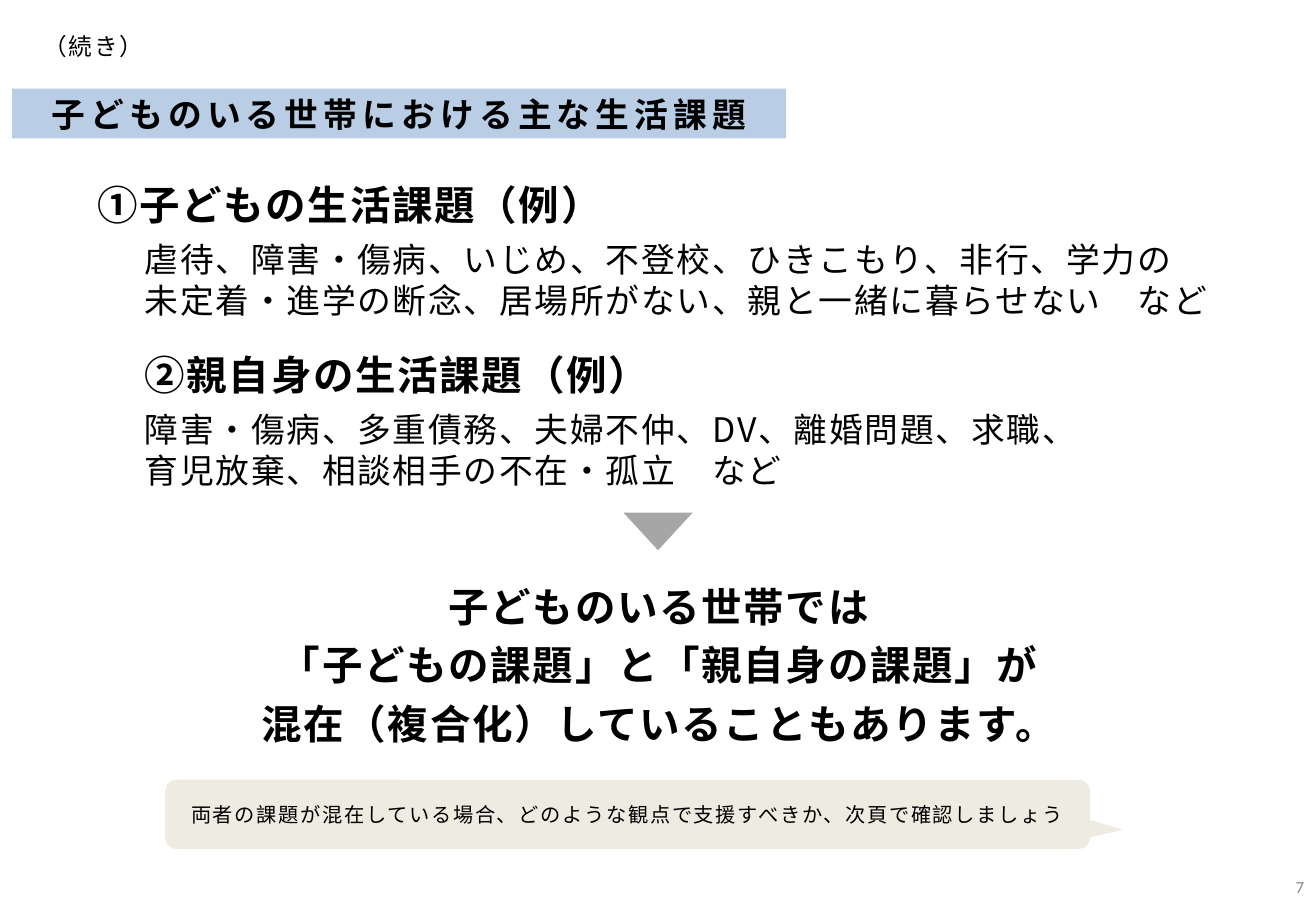
import dataclasses

import lxml.etree
import pptx
import pptx.dml.color
import pptx.enum.shapes
import pptx.enum.text
import pptx.oxml.ns
import pptx.util


@dataclasses.dataclass(frozen=True)
class Theme:
    font: str = "Noto Sans CJK JP"
    number_font: str = "Calibri"
    text: str = "000000"
    muted: str = "898989"
    banner: str = "B9CDE5"
    arrow: str = "A6A6A6"
    callout: str = "EEECE1"
    heading_size: int = 24
    body_size: int = 20
    label_size: int = 14
    note_size: int = 12
    number_size: int = 10
    tight: float = 1.2  # line pitch as a multiple of the type size


theme = Theme()
align = pptx.enum.text.PP_ALIGN
anchor = pptx.enum.text.MSO_ANCHOR
shapes = pptx.enum.shapes.MSO_SHAPE
qn = pptx.oxml.ns.qn

presentation = pptx.Presentation()
presentation.slide_width = pptx.util.Inches(10.83)
presentation.slide_height = pptx.util.Inches(7.5)
slide = presentation.slides.add_slide(presentation.slide_layouts[1])


def frame(left, top, width, height):
    """Turn percentages of the slide's width and height into lengths."""
    column = presentation.slide_width / 100
    row = presentation.slide_height / 100
    return [round(n) for n in (left * column, top * row, width * column, height * row)]


def write(shape, text, size, font=theme.font, color=theme.text, bold=False, spacing=1,
          alignment=align.LEFT, vertical=anchor.TOP, indent=0, after=0, tight=False):
    """Add one formatted paragraph; a newline in the text is a line break."""
    text_frame = shape.text_frame
    text_frame.word_wrap = True
    text_frame.auto_size = pptx.enum.text.MSO_AUTO_SIZE.NONE
    text_frame.vertical_anchor = vertical
    paragraph = text_frame.paragraphs[0] if not text_frame.text else text_frame.add_paragraph()
    paragraph.alignment = alignment
    paragraph.space_before = pptx.util.Pt(0)
    paragraph.space_after = pptx.util.Pt(after)
    if tight:
        paragraph.line_spacing = pptx.util.Pt(size * theme.tight)
    properties = paragraph._p.get_or_add_pPr()
    properties.set("marL", str(pptx.util.Inches(indent)))
    properties.set("indent", "0")
    lxml.etree.SubElement(properties, qn("a:buNone"))
    for index, line in enumerate(text.split("\n")):
        if index:
            paragraph.add_line_break()
        run = paragraph.add_run()
        run.text = line
        run.font.name = font
        run.font.size = pptx.util.Pt(size)
        run.font.bold = bold
        run.font.color.rgb = pptx.dml.color.RGBColor.from_string(color)
        run_properties = run.font._element
        run_properties.set("spc", str(spacing * 100))
        east_asian = lxml.etree.SubElement(run_properties, qn("a:ea"))
        east_asian.set("typeface", font)


# Title banner: the title placeholder with rounded corners
title = slide.shapes.title
title.left, title.top, title.width, title.height = frame(0.92, 9.73, 58.82, 5.47)
geometry = lxml.etree.SubElement(title._element.spPr, qn("a:prstGeom"), prst="roundRect")
adjustments = lxml.etree.SubElement(geometry, qn("a:avLst"))
lxml.etree.SubElement(adjustments, qn("a:gd"), name="adj", fmla="val 23400")
title.fill.solid()
title.fill.fore_color.rgb = pptx.dml.color.RGBColor.from_string(theme.banner)
title.text_frame.margin_top = pptx.util.Inches(0.04)
title.text_frame.margin_bottom = 0
write(title, "子どものいる世帯における主な生活課題", theme.body_size,
      bold=True, spacing=3, alignment=align.CENTER)

# Issues of children and of parents
issues = slide.placeholders[1]
issues.left, issues.top, issues.width, issues.height = frame(6.46, 19.1, 87.9, 35.73)
heading = dict(size=theme.heading_size, bold=True, after=6, tight=True)
detail = dict(size=theme.body_size, indent=0.39, tight=True)
write(issues, "①子どもの生活課題（例）", **heading)
write(issues, "虐待、障害・傷病、いじめ、不登校、ひきこもり、非行、学力の\n"
      "未定着・進学の断念、居場所がない、親と一緒に暮らせない　など", after=18, **detail)
write(issues, "②親自身の生活課題（例）", indent=0.39, **heading)
write(issues, "障害・傷病、多重債務、夫婦不仲、DV、離婚問題、求職、", **detail)
write(issues, "育児放棄、相談相手の不在・孤立　など", after=12, **detail)

# Conclusion
conclusion = slide.shapes.add_textbox(*frame(10.53, 63.2, 79.04, 19.73))
for line in ("子どものいる世帯では",
             "「子どもの課題」と「親自身の課題」が",
             "混在（複合化）していることもあります。"):
    write(conclusion, line, alignment=align.CENTER, **heading)

# Down arrow and callout
arrow = slide.shapes.add_shape(shapes.ISOSCELES_TRIANGLE, *frame(47.37, 56.27, 5.26, 4.13))
arrow.rotation = 180
callout = slide.shapes.add_shape(shapes.ROUNDED_RECTANGULAR_CALLOUT,
                                 *frame(12.56, 85.6, 70.27, 7.6))
for index, value in enumerate((0.536, 0.22, 0.167)):
    callout.adjustments[index] = value
for shape, color in ((arrow, theme.arrow), (callout, theme.callout)):
    shape.shadow.inherit = False
    shape.fill.solid()
    shape.fill.fore_color.rgb = pptx.dml.color.RGBColor.from_string(color)
    shape.line.fill.background()
write(callout, "両者の課題が混在している場合、どのような観点で支援すべきか、次頁で確認しましょう",
      theme.note_size, alignment=align.CENTER, vertical=anchor.MIDDLE)

# Continuation label and page number
continuation = slide.shapes.add_textbox(*frame(2.4, 3.47, 10.16, 3.2))
continuation.text_frame.margin_top = continuation.text_frame.margin_bottom = 0
write(continuation, "（続き）", theme.label_size, tight=True)
page_number = slide.shapes.add_textbox(*frame(96.21, 94.67, 3.79, 5.33))
write(page_number, "7", theme.number_size, font=theme.number_font, color=theme.muted,
      spacing=0, alignment=align.RIGHT, vertical=anchor.MIDDLE)

presentation.save("out.pptx")
